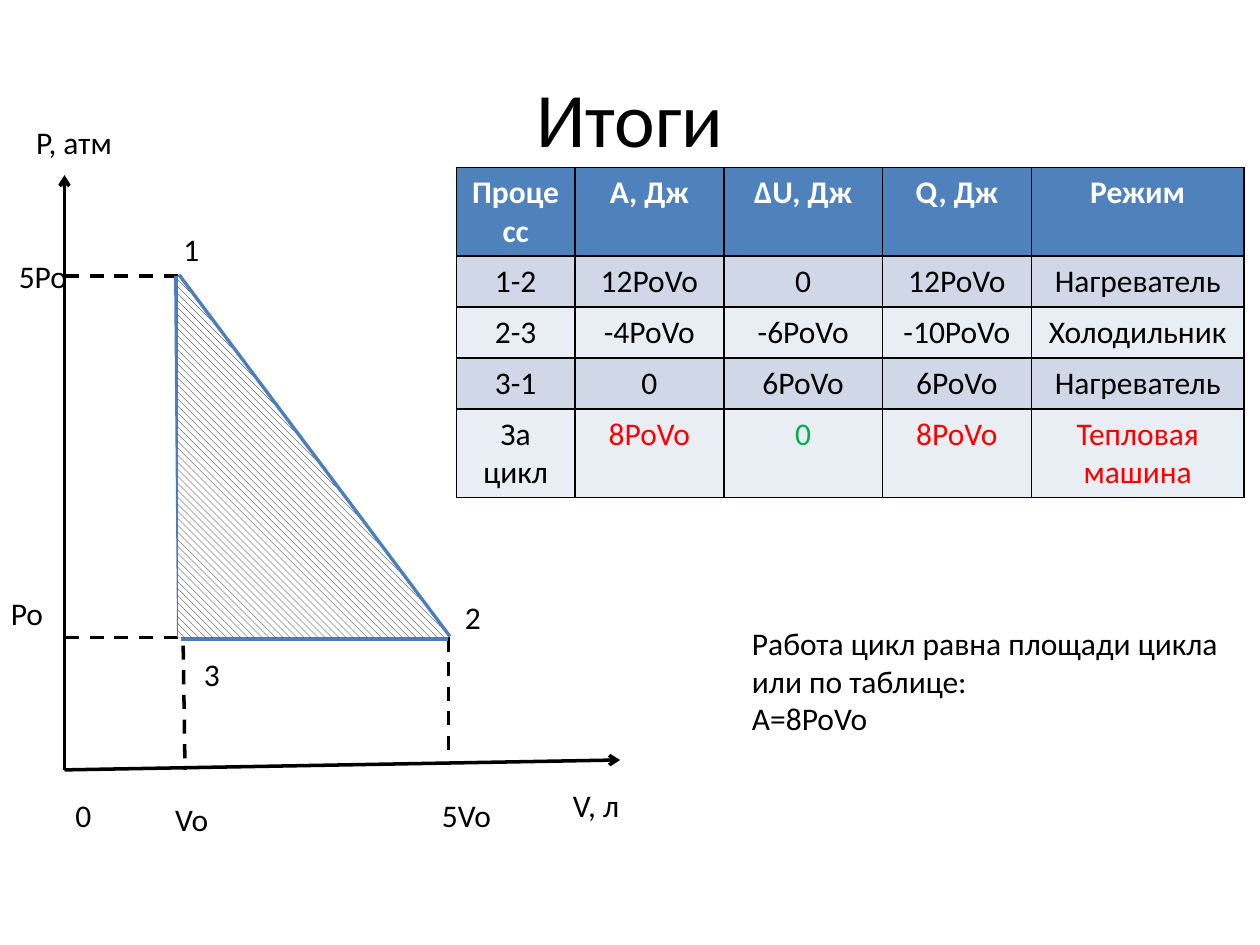
"""Build a slide that sums up a gas cycle."""
from dataclasses import dataclass

from lxml import etree
from pptx import Presentation
from pptx import util as u
from pptx.dml import color as clr
from pptx.enum import dml, shapes, text
from pptx.oxml import ns


@dataclass(frozen=True)
class Theme:
    """Hold the colours, font and sizes of the slide."""
    font: str = "Calibri"
    big: int = 44
    body: int = 18
    ink: str = "000000"
    paper: str = "FFFFFF"
    blue: str = "4B7EBC"
    head: str = "4F81BD"
    bands: tuple = ("D0D8E8", "E9EDF4")
    red: str = "FF0000"
    green: str = "00B050"
    thin: int = 2
    thick: int = 4


T = Theme()
ROWS = (
    ("Процесс", "A, Дж", "ΔU, Дж", "Q, Дж", "Режим"),
    ("1-2", "12PoVo", "0", "12PoVo", "Нагреватель"),
    ("2-3", "-4PoVo", "-6PoVo", "-10PoVo", "Холодильник"),
    ("3-1", "0", "6PoVo", "6PoVo", "Нагреватель"),
    ("За цикл", "8PoVo", "0", "8PoVo", "Тепловая машина"),
)
WIDTHS = (2.39, 3, 3.2, 3, 4.29)
TOTAL = (T.ink, T.red, T.green, T.red, T.red)
LABELS = (
    ("P, атм", 0.48, 0, 2.06),
    ("V, л", 11.3, 13.36, 1.45),
    ("0", 1.27, 13.57, 0.84),
    ("5Po", 0.13, 2.69, 1.5),
    ("Vo", 3.28, 13.64, 1.19),
    ("5Vo", 8.66, 13.57, 1.52),
    ("Po", -0.03, 9.5, 1.17),
    ("1", 3.45, 2.16, 0.84),
    ("2", 9.12, 9.58, 0.84),
    ("3", 3.86, 10.72, 0.84),
)


def rgb(hue):
    """Turn a hex string into a colour."""
    return clr.RGBColor.from_string(hue)


def write(frame, words, size=T.body, hue=T.ink, bold=False, align=text.PP_ALIGN.LEFT):
    """Fill a text frame with words in one format."""
    frame.text = words
    for para in frame.paragraphs:
        para.alignment = align
        para.font.name = T.font
        para.font.size = u.Pt(size)
        para.font.bold = bold
        para.font.color.rgb = rgb(hue)


def label(slide, words, x, y, w, h=1.02, wrap=False):
    """Place a text box that fits its words."""
    frame = slide.shapes.add_textbox(u.Cm(x), u.Cm(y), u.Cm(w), u.Cm(h)).text_frame
    frame.word_wrap = wrap
    frame.auto_size = text.MSO_AUTO_SIZE.SHAPE_TO_FIT_TEXT
    write(frame, words)


def line(slide, start, end, hue=T.ink, width=T.thin, dash=False, arrow=False):
    """Draw a straight line between two points."""
    ends = [u.Cm(n) for n in (*start, *end)]
    link = slide.shapes.add_connector(shapes.MSO_CONNECTOR.STRAIGHT, *ends)
    link.line.color.rgb = rgb(hue)
    link.line.width = u.Pt(width)
    if dash:
        link.line.dash_style = dml.MSO_LINE.DASH
    if arrow:
        etree.SubElement(link.line._get_or_add_ln(), ns.qn("a:tailEnd"), type="arrow")
    etree.SubElement(link._element.spPr, ns.qn("a:effectLst"))


def title(slide, x, y, w, h):
    """Place the centred heading."""
    frame = slide.shapes.add_textbox(u.Cm(x), u.Cm(y), u.Cm(w), u.Cm(h)).text_frame
    frame.word_wrap = True
    frame.vertical_anchor = text.MSO_ANCHOR.MIDDLE
    write(frame, "Итоги", size=T.big, align=text.PP_ALIGN.CENTER)


def graph(slide, x, y):
    """Draw the cycle on its pressure and volume axes."""
    left, low, near, far = x + 1.3, y + 13.16, x + 3.58, x + 9.04
    high, base = y + 3.2, y + 10.49
    zero, one, two, three = (left, low), (near, high), (far, base), (near + 0.06, base)
    for tip in ((left, y + 1.17), (x + 12.5, low - 0.2)):
        line(slide, zero, tip, arrow=True)
    dashes = (
        (one, (left, high)),
        ((near, base), (left, base)),
        (two, (far, low - 0.2)),
        (one, (near + 0.15, low)),
    )
    for start, end in dashes:
        line(slide, start, end, dash=True)
    for start, end in ((three, one), (three, two), (two, one)):
        line(slide, start, end, hue=T.blue, width=T.thick)
    for words, dx, dy, w in LABELS:
        label(slide, words, x + dx, y + dy, w, wrap=len(words) == 1)
    area = slide.shapes.add_shape(
        shapes.MSO_SHAPE.RIGHT_TRIANGLE,
        u.Cm(near), u.Cm(high), u.Cm(far - near), u.Cm(base - high))
    area.shadow.inherit = False
    area.line.fill.background()
    area.fill.patterned()
    area.fill.pattern = dml.MSO_PATTERN.WIDE_DOWNWARD_DIAGONAL
    area.fill.fore_color.rgb = rgb(T.ink)
    area.fill.back_color.rgb = rgb(T.paper)


def border(cell):
    """Draw a thin line on each side of a cell."""
    props = cell._tc.get_or_add_tcPr()
    for side in ("lnL", "lnR", "lnT", "lnB"):
        edge = etree.SubElement(props, ns.qn("a:" + side), w=str(u.Pt(1)))
        fill = etree.SubElement(edge, ns.qn("a:solidFill"))
        etree.SubElement(fill, ns.qn("a:srgbClr"), val=T.ink)


def table(slide, x, y, tall=1.03):
    """Place the table of processes."""
    grid = slide.shapes.add_table(
        len(ROWS), len(WIDTHS), u.Cm(x), u.Cm(y),
        u.Cm(sum(WIDTHS)), u.Cm(tall * len(ROWS))).table
    for col, wide in zip(grid.columns, WIDTHS):
        col.width = u.Cm(wide)
    for r, row in enumerate(ROWS):
        grid.rows[r].height = u.Cm(tall)
        top, last = r == 0, r == len(ROWS) - 1
        for c, words in enumerate(row):
            cell = grid.cell(r, c)
            border(cell)
            cell.fill.solid()
            cell.fill.fore_color.rgb = rgb(T.head if top else T.bands[(r - 1) % 2])
            hue = T.paper if top else TOTAL[c] if last else T.ink
            write(cell.text_frame, words, hue=hue, bold=top, align=text.PP_ALIGN.CENTER)


def note(slide, x, y):
    """Place the closing remark."""
    words = "Работа цикл равна площади цикла \vили по таблице:\nA=8PoVo"
    label(slide, words, x, y, 10.16, h=2.57)


def main():
    """Build and save the slide."""
    deck = Presentation()
    deck.slide_width, deck.slide_height = u.Cm(25.4), u.Cm(19.05)
    slide = deck.slides.add_slide(deck.slide_layouts[6])
    title(slide, 1.27, 0.76, 22.86, 3.18)
    graph(slide, 0, 2.36)
    table(slide, 9.2, 3.38)
    note(slide, 14.91, 12.45)
    deck.save("out.pptx")


if __name__ == "__main__":
    main()
